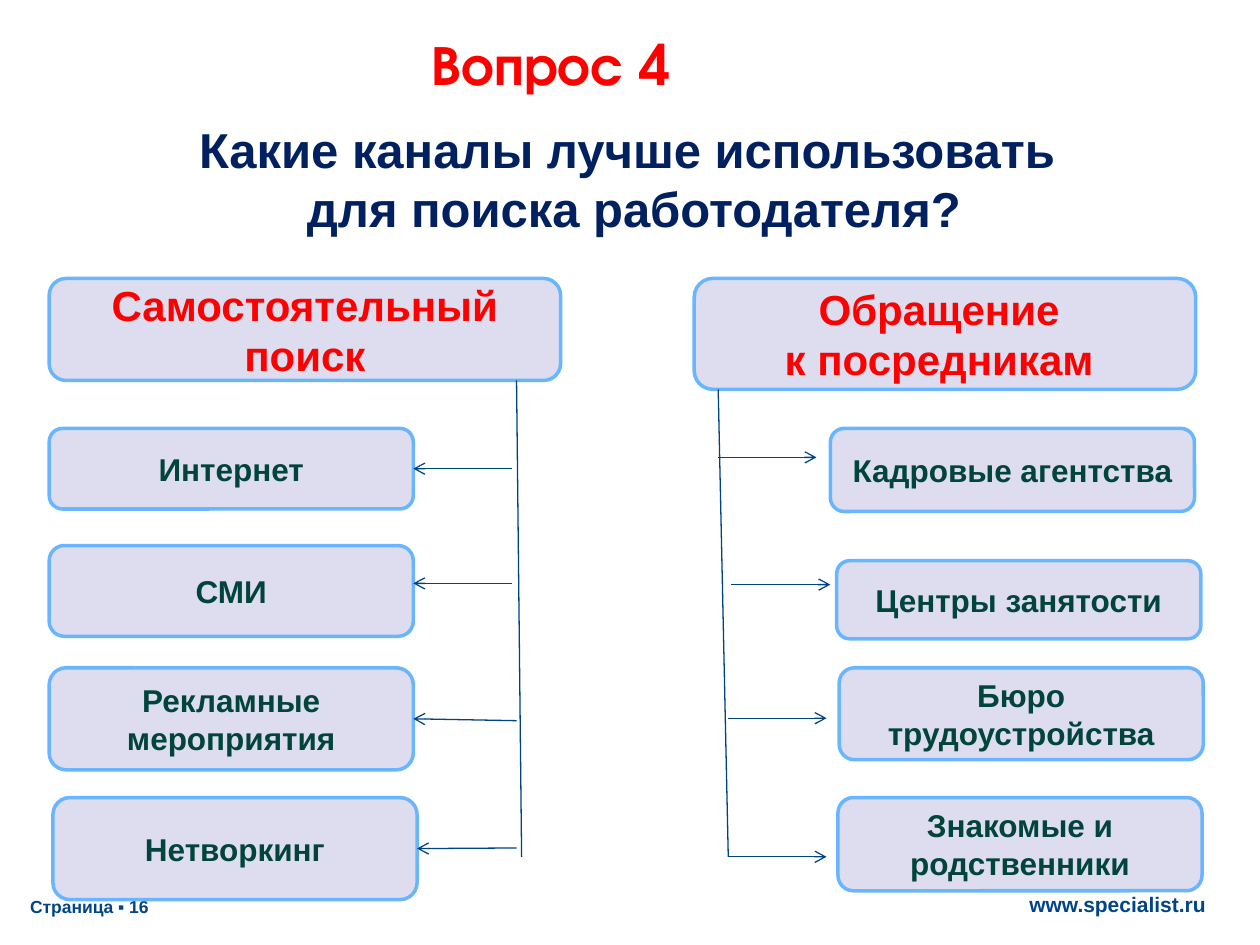
from typing import NamedTuple, Optional

import pptx
import pptx.dml.color
import pptx.enum.shapes
import pptx.enum.text
import pptx.oxml.ns
import pptx.util
from lxml import etree

Inches = pptx.util.Inches
Pt = pptx.util.Pt
Align = pptx.enum.text.PP_ALIGN
Anchor = pptx.enum.text.MSO_ANCHOR

COLORS = {
    "red": "FF0000",
    "navy": "002060",
    "green": "00443B",
    "foot": "004587",
    "line": "004384",
    "fill": "DDDDEF",
    "edge": "69B6FF",
}
ITEM_W = 2.89


class Style(NamedTuple):
    size: int
    color: str
    font: str = "Arial"
    align: Align = Align.CENTER
    space: float = 1.0


class Label(NamedTuple):
    lines: list[str]
    at: tuple[float, float, float, float]
    style: Style
    anchor: Anchor = Anchor.MIDDLE
    wrap: bool = True


class Item(NamedTuple):
    """A channel box and its arrow; joined arrows end on the box's right side."""
    text: str
    left: float
    top: float
    height: float
    start: tuple[float, float]
    end: tuple[float, float]
    joined: bool = False


HEAD = Style(24, "red")
BODY = Style(18, "green")

LABELS = [
    Label(["Страница ▪ 16"], (0.14, 7, 3.15, 0.39),
          Style(10, "foot", align=Align.LEFT)),
    Label(["www.specialist.ru"], (8.06, 6.98, 1.62, 0.39),
          Style(12, "foot"), wrap=False),
    Label(["Вопрос 4"], (3.33, 0.14, 2.86, 0.79),
          Style(32, "red", "TeX Gyre Adventor", Align.LEFT, 0.9)),
    Label(["Какие каналы лучше использовать ", "для поиска работодателя?"],
          (0.74, 0.9, 8.58, 1.04), Style(28, "navy"), Anchor.TOP),
]
HEADS = [
    Label(["Самостоятельный поиск"], (0.39, 2.21, 4.06, 0.81), HEAD),
    Label(["Обращение ", "к посредникам "], (5.51, 2.21, 3.98, 0.88), HEAD),
]
ITEMS = [
    Item("Интернет", 0.39, 3.4, 0.64, (4.06, 3.72), (3.28, 3.72), True),
    Item("СМИ", 0.39, 4.33, 0.72, (4.06, 4.63), (3.28, 4.63)),
    Item("Рекламные мероприятия", 0.39, 5.3, 0.81,
         (4.1, 5.72), (3.28, 5.7), True),
    Item("Нетворкинг", 0.42, 6.33, 0.81, (4.1, 6.73), (3.31, 6.73), True),
    Item("Кадровые агентства", 6.59, 3.4, 0.66, (5.7, 3.63), (6.48, 3.63)),
    Item("Центры занятости", 6.64, 4.45, 0.62, (5.8, 4.64), (6.59, 4.64)),
    Item("Бюро трудоустройства", 6.66, 5.3, 0.73, (5.78, 5.7), (6.56, 5.7)),
    Item("Знакомые и родственники", 6.65, 6.33, 0.74,
         (5.78, 6.8), (6.56, 6.8)),
]
TRUNKS = [((4.1, 3.02), (4.14, 6.8)), ((5.7, 3.09), (5.78, 6.8))]


def rgb(name: str) -> pptx.dml.color.RGBColor:
    return pptx.dml.color.RGBColor.from_string(COLORS[name])


def write(shape, label: Label) -> None:
    frame = shape.text_frame
    frame.word_wrap = label.wrap
    frame.vertical_anchor = label.anchor
    style = label.style
    for index, line in enumerate(label.lines):
        para = frame.paragraphs[0] if index == 0 else frame.add_paragraph()
        para.alignment = style.align
        para.line_spacing = style.space
        run = para.add_run()
        run.text = line
        run.font.name = style.font
        run.font.size = Pt(style.size)
        run.font.bold = True
        run.font.color.rgb = rgb(style.color)


def add_label(slide, label: Label) -> None:
    write(slide.shapes.add_textbox(*map(Inches, label.at)), label)


def add_box(slide, label: Label):
    box = slide.shapes.add_shape(
        pptx.enum.shapes.MSO_SHAPE.ROUNDED_RECTANGLE, *map(Inches, label.at))
    box.shadow.inherit = False
    box.fill.solid()
    box.fill.fore_color.rgb = rgb("fill")
    box.line.color.rgb = rgb("edge")
    box.line.width = Pt(2)
    write(box, label)
    return box


def add_line(slide, start: tuple[float, float], end: tuple[float, float],
             arrow: bool = False, target: Optional[object] = None) -> None:
    """Draw a thin line, ending on the target's right side if one is given."""
    line = slide.shapes.add_connector(
        pptx.enum.shapes.MSO_CONNECTOR.STRAIGHT, *map(Inches, start + end))
    line.line.color.rgb = rgb("line")
    line.line.width = Pt(0.75)
    qn = pptx.oxml.ns.qn
    if arrow:
        pen = line.line._get_or_add_ln()
        etree.SubElement(pen, qn("a:tailEnd"), type="arrow")
    etree.SubElement(line._element.spPr, qn("a:effectLst"))
    if target is not None:
        line.end_connect(target, 3)


def add_item(slide, item: Item) -> None:
    at = (item.left, item.top, ITEM_W, item.height)
    box = add_box(slide, Label([item.text], at, BODY))
    add_line(slide, item.start, item.end, True, box if item.joined else None)


def main() -> None:
    deck = pptx.Presentation()
    deck.slide_width = Inches(10)
    deck.slide_height = Inches(7.5)
    slide = deck.slides.add_slide(deck.slide_layouts[6])
    for label in LABELS:
        add_label(slide, label)
    for head in HEADS:
        add_box(slide, head)
    for start, end in TRUNKS:
        add_line(slide, start, end)
    for item in ITEMS:
        add_item(slide, item)
    deck.save("out.pptx")


if __name__ == "__main__":
    main()
